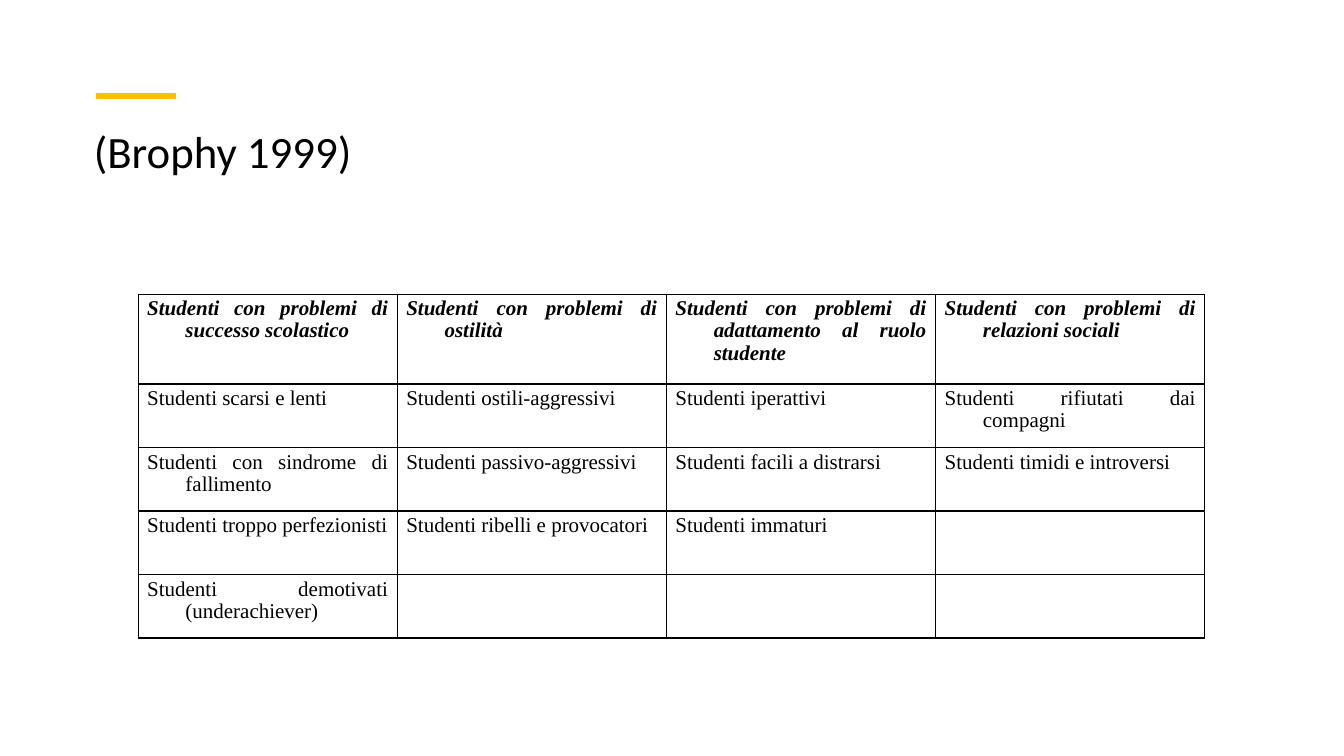
from lxml import etree
from pptx import Presentation
from pptx import util as u
from pptx.dml.color import RGBColor
from pptx.enum import shapes, text
from pptx.oxml import ns

PX = u.Inches(1) // 100
COLORS = {"text": "000000", "accent": "FFC000", "border": "000000", "background": "FFFFFF"}
COLUMN_WIDTHS = [257, 267, 267, 267]
ROW_HEIGHTS = [89, 63, 63, 63, 63]
STUDENT_TYPES = [
    ["Studenti con problemi di successo scolastico", "Studenti con problemi di ostilità",
     "Studenti con problemi di adattamento al ruolo studente",
     "Studenti con problemi di relazioni sociali"],
    ["Studenti scarsi e lenti", "Studenti ostili-aggressivi", "Studenti iperattivi",
     "Studenti rifiutati dai compagni"],
    ["Studenti con sindrome di fallimento", "Studenti passivo-aggressivi",
     "Studenti facili a distrarsi", "Studenti timidi e introversi"],
    ["Studenti troppo perfezionisti", "Studenti ribelli e provocatori", "Studenti immaturi", ""],
    ["Studenti demotivati (underachiever)", "", "", ""],
]


def px(*lengths):
    return [u.Emu(length * PX) for length in lengths]


def color(name):
    return RGBColor.from_string(COLORS[name])


def format_font(font, name, size):
    font.name = name
    font.size = u.Pt(size)
    font.color.rgb = color("text")


def add_accent(slide, left, top, width):
    line = slide.shapes.add_connector(
        shapes.MSO_CONNECTOR.STRAIGHT, *px(left, top, left + width, top))
    line.line.color.rgb = color("accent")
    line.line.width = u.Pt(4.5)
    etree.SubElement(line._element.spPr, ns.qn("a:effectLst"))


def add_heading(slide, left, top, width, height):
    add_accent(slide, left + 12, top - 29, 80)
    title = slide.shapes.title
    title.left, title.top, title.width, title.height = px(left, top, width, height)
    frame = title.text_frame
    frame.text = "(Brophy 1999)"
    frame.word_wrap = True
    frame.auto_size = text.MSO_AUTO_SIZE.NONE
    frame.vertical_anchor = text.MSO_ANCHOR.TOP
    paragraph = frame.paragraphs[0]
    paragraph.alignment = text.PP_ALIGN.LEFT
    paragraph.line_spacing = 0.9
    format_font(paragraph.font, "Calibri", 32)


def add_borders(cell):
    properties = cell._tc.get_or_add_tcPr()
    for position, side in enumerate(["lnL", "lnR", "lnT", "lnB"]):
        border = etree.Element(ns.qn(f"a:{side}"), w=str(u.Pt(1)))
        fill = etree.SubElement(border, ns.qn("a:solidFill"))
        etree.SubElement(fill, ns.qn("a:srgbClr"), val=COLORS["border"])
        properties.insert(position, border)


def format_cell(cell, label, is_header):
    cell.fill.background()
    add_borders(cell)
    cell.margin_left, cell.margin_right = px(9, 9)
    cell.margin_top, cell.margin_bottom = px(4, 4)
    cell.text = label
    paragraph = cell.text_frame.paragraphs[0]
    paragraph.alignment = text.PP_ALIGN.JUSTIFY
    paragraph.line_spacing = 0.95
    indent = 38 * PX
    properties = paragraph._p.get_or_add_pPr()
    properties.set("marL", str(indent))
    properties.set("indent", str(-indent))
    format_font(paragraph.font, "Times New Roman", 15)
    paragraph.font.bold = paragraph.font.italic = is_header


def add_student_table(slide, left, top):
    size = px(left, top, sum(COLUMN_WIDTHS), sum(ROW_HEIGHTS))
    table = slide.shapes.add_table(len(ROW_HEIGHTS), len(COLUMN_WIDTHS), *size).table
    for column, width in zip(table.columns, px(*COLUMN_WIDTHS)):
        column.width = width
    for row, height in zip(table.rows, px(*ROW_HEIGHTS)):
        row.height = height
    for row_index, labels in enumerate(STUDENT_TYPES):
        for column_index, label in enumerate(labels):
            format_cell(table.cell(row_index, column_index), label, row_index == 0)


def main():
    presentation = Presentation()
    presentation.slide_width, presentation.slide_height = px(1333, 750)
    slide = presentation.slides.add_slide(presentation.slide_layouts[5])
    slide.background.fill.solid()
    slide.background.fill.fore_color.rgb = color("background")
    add_heading(slide, 83, 124, 1065, 121)
    add_student_table(slide, 137, 292)
    presentation.save("out.pptx")


if __name__ == "__main__":
    main()
